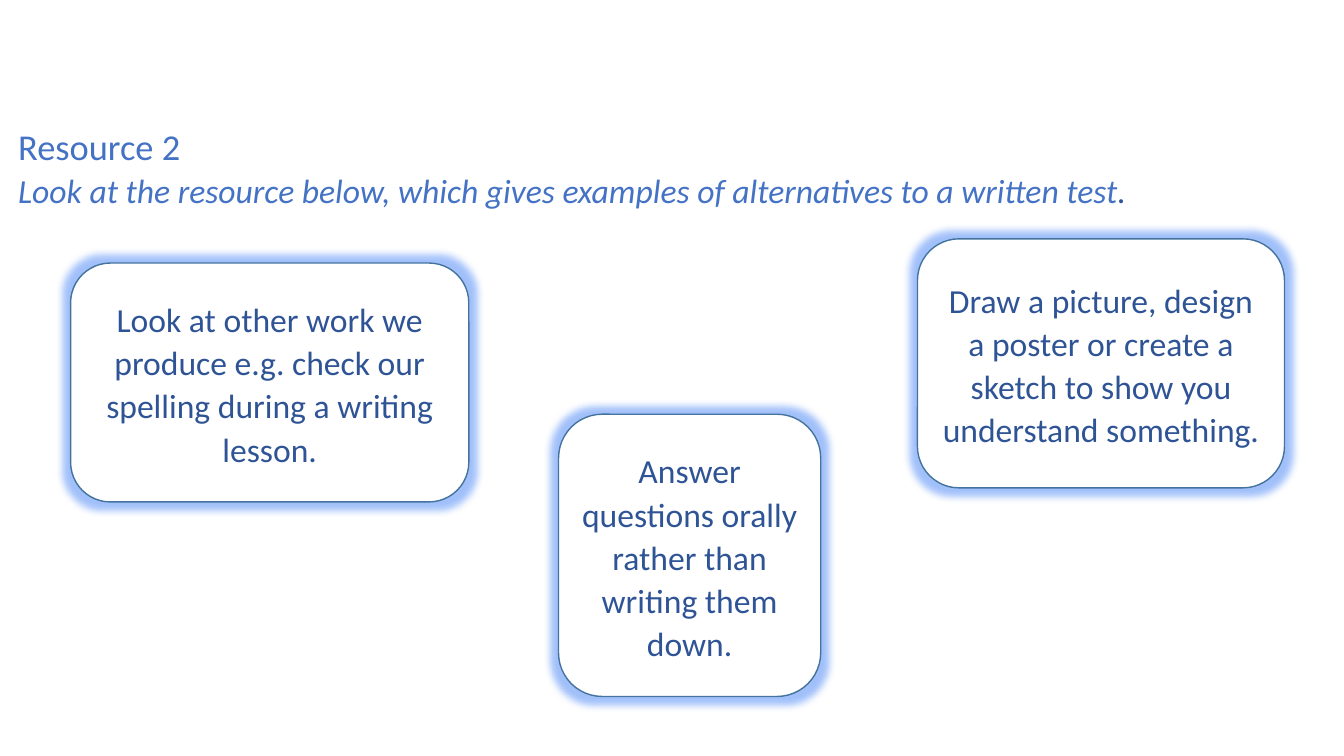
from dataclasses import dataclass

from lxml.etree import SubElement
from pptx import Presentation
from pptx.dml.color import RGBColor
from pptx.enum.shapes import MSO_SHAPE as Preset
from pptx.enum.text import MSO_ANCHOR as Anchor, MSO_AUTO_SIZE as AutoSize, PP_ALIGN as Align
from pptx.oxml.ns import qn
from pptx.util import Inches, Pt


@dataclass(frozen=True)
class Theme:
    font: str = "Calibri"
    heading: RGBColor = RGBColor(0x44, 0x72, 0xC4)
    body: RGBColor = RGBColor(0x2F, 0x54, 0x96)
    outline: RGBColor = RGBColor(0x43, 0x73, 0x9E)
    card: RGBColor = RGBColor(0xFF, 0xFF, 0xFF)
    glow: str = "1462F4"
    heading_size: Pt = Pt(26)
    body_size: Pt = Pt(24)
    glow_radius: Pt = Pt(11)
    line_spacing: float = 1.07


THEME = Theme()

HEADING_BOX = (0.08, -0.02, 13.17, 2.16)
CARDS = [
    ((0.7, 2.61, 3.95, 2.37),
     "Look at other work we produce e.g. check our spelling during a writing lesson."),
    ((5.54, 4.11, 2.6, 2.8),
     "Answer questions orally rather than writing them down."),
    ((9.1, 2.37, 3.64, 2.47),
     "Draw a picture, design a poster or create a sketch to show you understand something."),
]


def set_font(font, size, color):
    font.name = THEME.font
    font.size = size
    font.color.rgb = color


def add_heading(page, box):
    title = page.shapes.title
    title.left, title.top, title.width, title.height = map(Inches, box)
    frame = title.text_frame
    frame.auto_size = AutoSize.NONE
    frame.word_wrap = True
    frame.vertical_anchor = Anchor.BOTTOM

    label = frame.paragraphs[0]
    label.text = "Resource 2"
    label.alignment = Align.LEFT
    set_font(label.font, THEME.heading_size, THEME.heading)

    instruction = frame.add_paragraph()
    instruction.alignment = Align.JUSTIFY
    instruction.line_spacing = THEME.line_spacing
    set_font(instruction.font, THEME.body_size, THEME.heading)
    instruction.font.italic = True
    sentence = "Look at the resource below, which gives examples of alternatives to a written test"
    for text, color in ((sentence, THEME.heading), (".", THEME.body)):
        span = instruction.add_run()
        span.text = text
        span.font.color.rgb = color


def add_glow(shape):
    shape.shadow.inherit = False
    effects = shape._element.spPr.find(qn("a:effectLst"))
    glow = SubElement(effects, qn("a:glow"), rad=str(THEME.glow_radius))
    color = SubElement(glow, qn("a:srgbClr"), val=THEME.glow)
    SubElement(color, qn("a:alpha"), val="40000")


def add_card(page, box, text):
    card = page.shapes.add_shape(Preset.ROUNDED_RECTANGLE, *map(Inches, box))
    card.fill.solid()
    card.fill.fore_color.rgb = THEME.card
    card.line.color.rgb = THEME.outline
    card.line.width = Pt(1)
    add_glow(card)

    frame = card.text_frame
    frame.word_wrap = True
    frame.vertical_anchor = Anchor.MIDDLE
    para = frame.paragraphs[0]
    para.text = text
    para.alignment = Align.CENTER
    para.line_spacing = THEME.line_spacing
    para.space_after = Pt(8)
    set_font(para.font, THEME.body_size, THEME.body)


def main():
    deck = Presentation()
    deck.slide_width = Inches(13.33)
    deck.slide_height = Inches(7.5)
    page = deck.slides.add_slide(deck.slide_layouts.get_by_name("Title Only"))
    add_heading(page, HEADING_BOX)
    for box, text in CARDS:
        add_card(page, box, text)
    deck.save("out.pptx")


if __name__ == "__main__":
    main()
